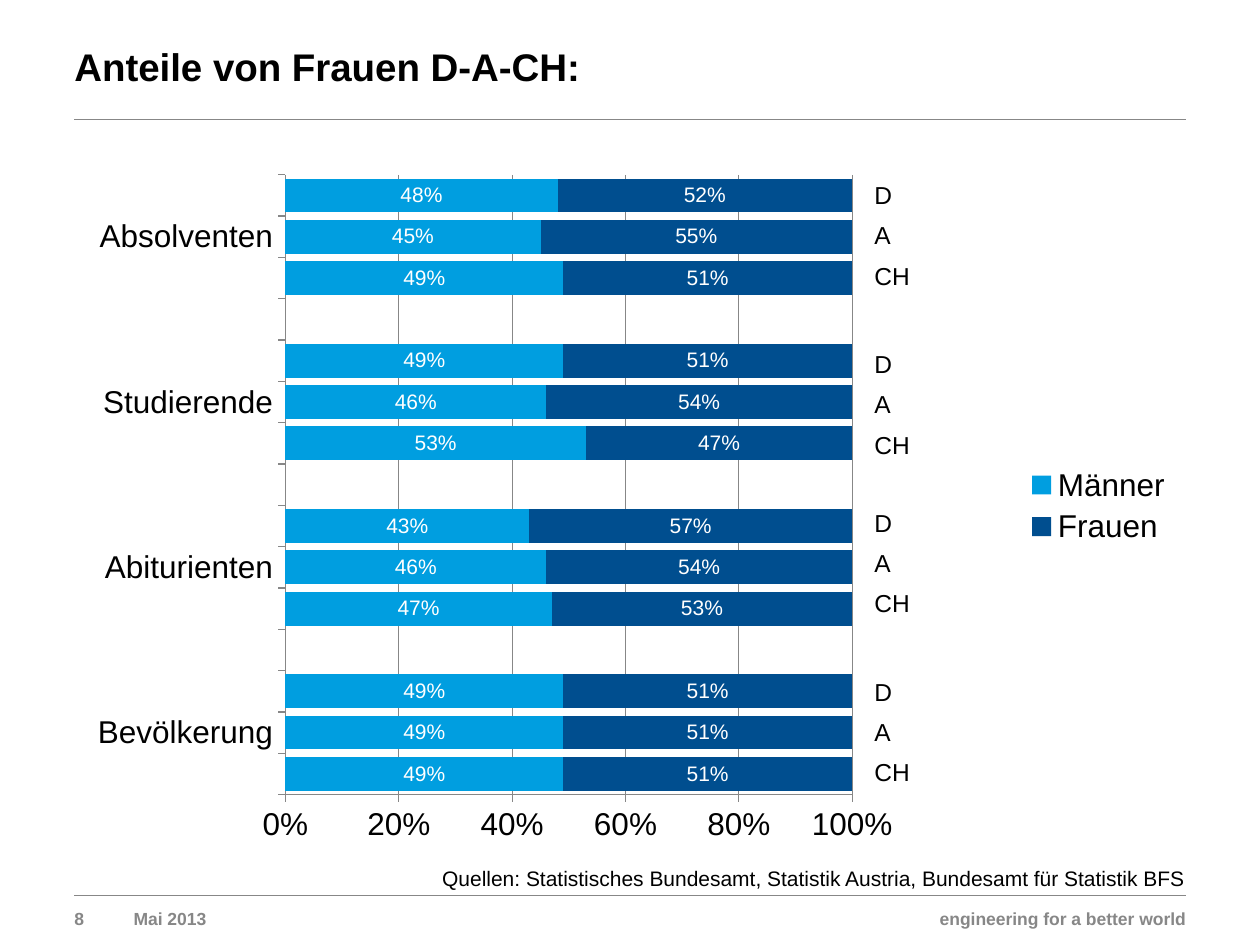
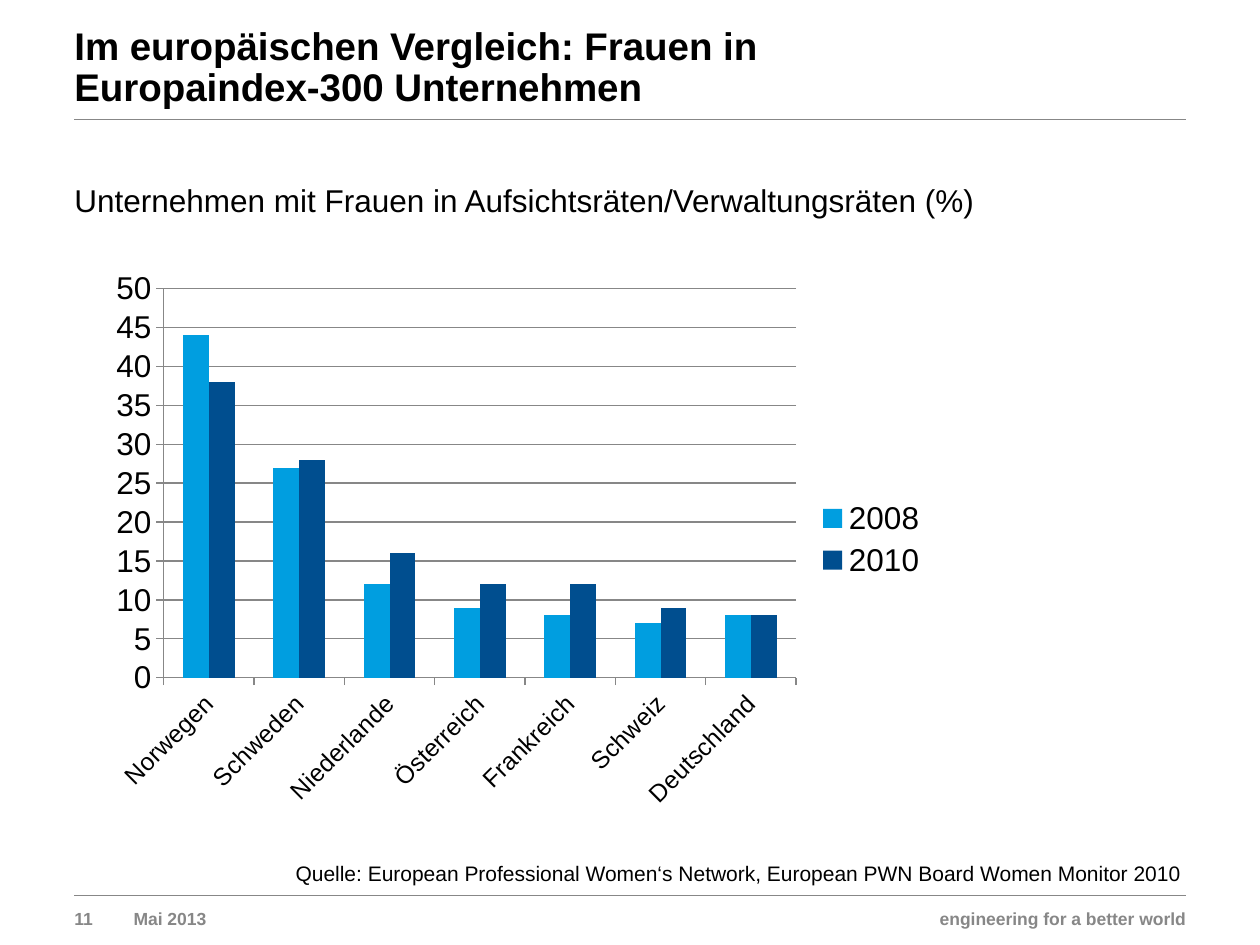
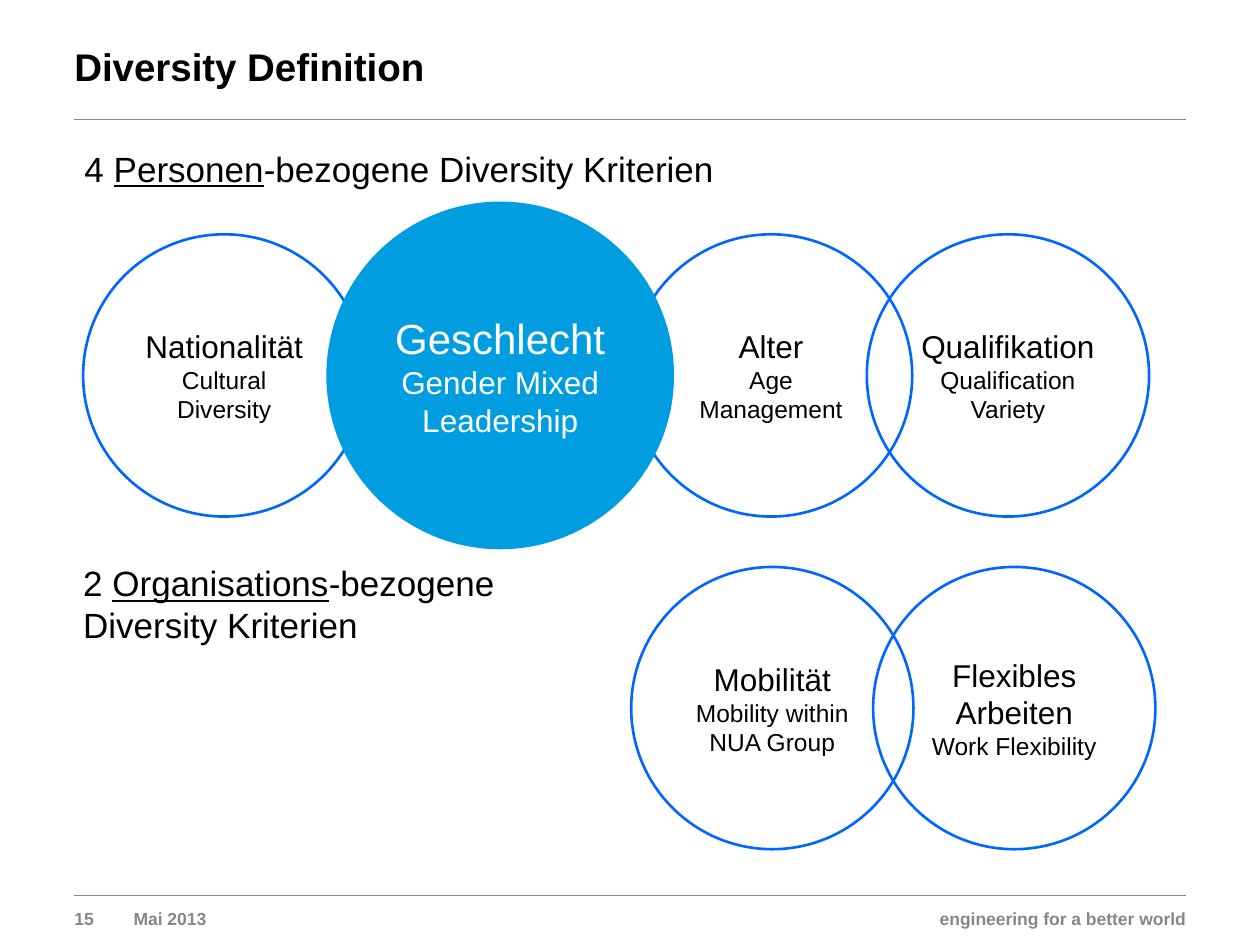
from dataclasses import dataclass

from lxml import etree
from pptx import Presentation
from pptx.chart.data import CategoryChartData
from pptx.dml.color import RGBColor
from pptx.enum.chart import XL_CHART_TYPE, XL_LEGEND_POSITION, XL_TICK_MARK
from pptx.enum.shapes import MSO_CONNECTOR, MSO_SHAPE
from pptx.enum.text import MSO_ANCHOR, PP_ALIGN
from pptx.oxml.ns import qn
from pptx.util import Inches, Pt

LEFT, CENTER, RIGHT = PP_ALIGN.LEFT, PP_ALIGN.CENTER, PP_ALIGN.RIGHT
TOP, MIDDLE = MSO_ANCHOR.TOP, MSO_ANCHOR.MIDDLE
STACKED_BARS = XL_CHART_TYPE.BAR_STACKED_100
COLUMNS = XL_CHART_TYPE.COLUMN_CLUSTERED


@dataclass(frozen=True)
class Theme:
    font: str = "Arial"
    text: RGBColor = RGBColor.from_string("000000")
    white: RGBColor = RGBColor.from_string("FFFFFF")
    gray: RGBColor = RGBColor.from_string("878787")
    light_blue: RGBColor = RGBColor.from_string("009EE0")
    dark_blue: RGBColor = RGBColor.from_string("004E8F")
    outline: RGBColor = RGBColor.from_string("0066FF")
    title_size: int = 22
    heading_size: int = 20
    body_size: int = 18
    small_size: int = 14
    source_size: int = 12
    footer_size: int = 10


THEME = Theme()
WIDTH, HEIGHT = 10, 7.5
MARGIN = 0.59
CONTENT_WIDTH = WIDTH - 2 * MARGIN
TITLE_RULE, FOOTER_RULE = 0.95, 7.11
FOOTER_TOP, FOOTER_HEIGHT = 7.2, 0.18

DATE = "Mai 2013"
CLAIM = "engineering for a better world"

# Groups run from the bottom of the chart to the top, countries likewise (CH, A, D).
WOMEN_SHARES = [
    ("Bevölkerung", (0.51, 0.51, 0.51)),
    ("Abiturienten", (0.53, 0.54, 0.57)),
    ("Studierende", (0.47, 0.54, 0.51)),
    ("Absolventen", (0.51, 0.55, 0.52)),
]
COUNTRIES = ["D", "A", "CH"]
COUNTRY_GROUP_TOPS = [1.43, 2.77, 4.03, 5.37]
COUNTRY_PITCH = 0.32
SHARES_SOURCE = "Quellen: Statistisches Bundesamt, Statistik Austria, Bundesamt für Statistik BFS"

BOARD_SHARES = {
    "Norwegen": (44, 38),
    "Schweden": (27, 28),
    "Niederlande": (12, 16),
    "Österreich": (9, 12),
    "Frankreich": (8, 12),
    "Schweiz": (7, 9),
    "Deutschland": (8, 8),
}
BOARD_CAPTION = "Unternehmen mit Frauen in Aufsichtsräten/Verwaltungsräten (%)"
BOARD_SOURCE = ("Quelle: European Professional Women‘s Network, "
                "European PWN Board Women Monitor 2010")

# Underscores enclose underlined words.
DIVERSITY_HEADINGS = [
    ("4 _Personen_-bezogene Diversity Kriterien", (0.67, 1.17, 5.98, 0.34)),
    ("2 _Organisations_-bezogene Diversity Kriterien", (0.66, 4.46, 4.35, 0.67)),
]
CIRCLE, MAIN_CIRCLE = 2.24, 2.76
PERSON_TOP, ORGANISATION_TOP = 1.86, 4.5
CRITERIA = [
    ("Nationalität", "Cultural Diversity", 0.66, PERSON_TOP),
    ("Alter", "Age Management", 5, PERSON_TOP),
    ("Qualifikation", "Qualification Variety", 6.88, PERSON_TOP),
    ("Mobilität", "Mobility within NUA Group", 5.01, ORGANISATION_TOP),
    ("Flexibles Arbeiten", "Work Flexibility", 6.93, ORGANISATION_TOP),
]
MAIN_CRITERION = ("Geschlecht", "Gender Mixed Leadership")


def box(left, top, width, height):
    return [Inches(length) for length in (left, top, width, height)]


def write(frame, lines, color=THEME.text, bold=False, align=LEFT, anchor=TOP, spacing=None):
    """Fill a frame with (text, size) lines; underscores enclose underlined words."""
    frame.word_wrap = True
    frame.vertical_anchor = anchor
    for index, (text, size) in enumerate(lines):
        paragraph = frame.paragraphs[0] if index == 0 else frame.add_paragraph()
        paragraph.alignment = align
        paragraph.line_spacing = spacing
        for position, part in enumerate(text.split("_")):
            run = paragraph.add_run()
            run.text = part
            if position % 2:
                run.font.underline = True
        font = paragraph.font
        font.name, font.size, font.bold = THEME.font, Pt(size), bold
        font.color.rgb = color


def add_text(slide, area, lines, **style):
    frame = slide.shapes.add_textbox(*box(*area)).text_frame
    frame.margin_left = frame.margin_right = frame.margin_top = frame.margin_bottom = 0
    write(frame, lines, **style)


def add_rule(slide, top):
    rule = slide.shapes.add_connector(
        MSO_CONNECTOR.STRAIGHT, Inches(MARGIN), Inches(top),
        Inches(WIDTH - MARGIN), Inches(top))
    rule.line.color.rgb = THEME.gray
    rule.line.width = Pt(0.5)
    etree.SubElement(rule._element.spPr, qn("a:effectLst"))


def add_slide(presentation, number, *title_lines):
    slide = presentation.slides.add_slide(presentation.slide_layouts[6])
    for top in (FOOTER_RULE, TITLE_RULE):
        add_rule(slide, top)
    add_text(slide, (MARGIN, 0.35, 6.71, 0.39),
             [(line, THEME.title_size) for line in title_lines],
             bold=True, anchor=MIDDLE, spacing=0.9)
    footer = [(str(number), MARGIN, 0.39, LEFT), (DATE, 1.06, 4.72, LEFT),
              (CLAIM, 5.83, 3.58, RIGHT)]
    for text, left, width, align in footer:
        add_text(slide, (left, FOOTER_TOP, width, FOOTER_HEIGHT),
                 [(text, THEME.footer_size)],
                 color=THEME.gray, bold=True, align=align, anchor=MIDDLE)
    return slide


def add_chart(slide, kind, area, categories, series, gap, number_format="General"):
    data = CategoryChartData(number_format=number_format)
    data.categories = categories
    for name, values in series:
        data.add_series(name, values)
    chart = slide.shapes.add_chart(kind, *box(*area), data).chart
    chart.has_title = False
    chart.font.name, chart.font.size = THEME.font, Pt(THEME.body_size)
    chart.font.color.rgb = THEME.text
    chart.has_legend = True
    chart.legend.position = XL_LEGEND_POSITION.RIGHT
    chart.legend.include_in_layout = False
    plot = chart.plots[0]
    plot.gap_width = gap
    plot.vary_by_categories = False
    for one_series, color in zip(plot.series, (THEME.light_blue, THEME.dark_blue)):
        one_series.format.fill.solid()
        one_series.format.fill.fore_color.rgb = color
    chart.value_axis.has_major_gridlines = True
    chart.value_axis.major_gridlines.format.line.color.rgb = THEME.gray
    for axis in (chart.category_axis, chart.value_axis):
        axis.major_tick_mark = XL_TICK_MARK.OUTSIDE
        axis.minor_tick_mark = XL_TICK_MARK.NONE
        axis.format.line.color.rgb = THEME.gray
    return chart


def place_plot(chart, left, top, width, height):
    """Fix the inner plot area, in shares of the chart's size."""
    plot_area = chart._chartSpace.chart.plotArea
    for old_layout in plot_area.findall(qn("c:layout")):
        plot_area.remove(old_layout)
    layout = etree.Element(qn("c:layout"))
    plot_area.insert(0, layout)
    manual = etree.SubElement(layout, qn("c:manualLayout"))
    settings = [("layoutTarget", "inner"), ("xMode", "edge"), ("yMode", "edge"),
                ("x", left), ("y", top), ("w", width), ("h", height)]
    for name, value in settings:
        etree.SubElement(manual, qn("c:" + name)).set("val", str(value))


def build_shares(presentation):
    slide = add_slide(presentation, 8, "Anteile von Frauen D-A-CH:")
    categories, women = [], []
    for name, shares in WOMEN_SHARES:
        if categories:
            categories.append("")
            women.append(None)
        categories += ["", name, ""]
        women += shares
    men = [None if share is None else round(1 - share, 2) for share in women]
    chart = add_chart(slide, STACKED_BARS, (MARGIN, 1.22, CONTENT_WIDTH, 5.59),
                      categories, [("Männer", men), ("Frauen", women)], 22, "0%")
    place_plot(chart, 0.19, 0.03, 0.51, 0.88)
    chart.plots[0].overlap = 100
    chart.value_axis.tick_labels.number_format = "0%"
    chart.value_axis.tick_labels.number_format_is_linked = False
    for series in chart.plots[0].series:
        labels = series.data_labels
        labels.show_value = True
        labels.number_format, labels.number_format_is_linked = "0%", False
        labels.font.size = Pt(THEME.source_size)
        labels.font.color.rgb = THEME.white
    for group_top in COUNTRY_GROUP_TOPS:
        for row, country in enumerate(COUNTRIES):
            add_text(slide, (6.94, group_top + row * COUNTRY_PITCH, 0.47, 0.24),
                     [(country, THEME.small_size)])
    add_text(slide, (0.75, 6.87, 8.66, 0.2), [(SHARES_SOURCE, THEME.source_size)], align=RIGHT)


def build_boards(presentation):
    slide = add_slide(presentation, 11, "Im europäischen Vergleich: Frauen in",
                      "Europaindex-300 Unternehmen")
    series = zip(("2008", "2010"), zip(*BOARD_SHARES.values()))
    chart = add_chart(slide, COLUMNS, (0.79, 2.06, 6.67, 4.44),
                      list(BOARD_SHARES), series, 150)
    chart.plots[0].overlap = 0
    axis = chart.value_axis
    axis.minimum_scale, axis.maximum_scale, axis.major_unit = 0, 50, 5
    chart.category_axis.tick_labels.font.size = Pt(THEME.small_size)
    label_body = chart.category_axis._element.find(qn("c:txPr")).find(qn("a:bodyPr"))
    label_body.set("rot", str(-45 * 60000))
    add_text(slide, (0.48, 6.83, 8.9, 0.2), [(BOARD_SOURCE, THEME.source_size)], align=RIGHT)
    add_text(slide, (MARGIN, 1.44, 8.79, 0.3), [(BOARD_CAPTION, THEME.body_size)])


def add_circle(slide, left, top, diameter, lines, filled=False):
    circle = slide.shapes.add_shape(MSO_SHAPE.OVAL, *box(left, top, diameter, diameter))
    circle.shadow.inherit = False
    if filled:
        circle.fill.solid()
        circle.fill.fore_color.rgb = THEME.light_blue
        circle.line.fill.background()
    else:
        circle.fill.background()
        circle.line.color.rgb = THEME.outline
        circle.line.width = Pt(1.5)
    write(circle.text_frame, lines, color=THEME.white if filled else THEME.text,
          align=CENTER, anchor=MIDDLE)


def build_diversity(presentation):
    slide = add_slide(presentation, 15, "Diversity Definition")
    for heading, area in DIVERSITY_HEADINGS:
        add_text(slide, area, [(heading, THEME.heading_size)])
    for name, detail, left, top in CRITERIA:
        add_circle(slide, left, top, CIRCLE,
                   [(name, THEME.body_size), (detail, THEME.small_size)])
    main_top = PERSON_TOP - (MAIN_CIRCLE - CIRCLE) / 2
    add_circle(slide, 2.59, main_top, MAIN_CIRCLE,
               list(zip(MAIN_CRITERION, (24, THEME.body_size))), filled=True)


def main():
    presentation = Presentation()
    presentation.slide_width, presentation.slide_height = Inches(WIDTH), Inches(HEIGHT)
    build_shares(presentation)
    build_boards(presentation)
    build_diversity(presentation)
    presentation.save("out.pptx")


if __name__ == "__main__":
    main()
